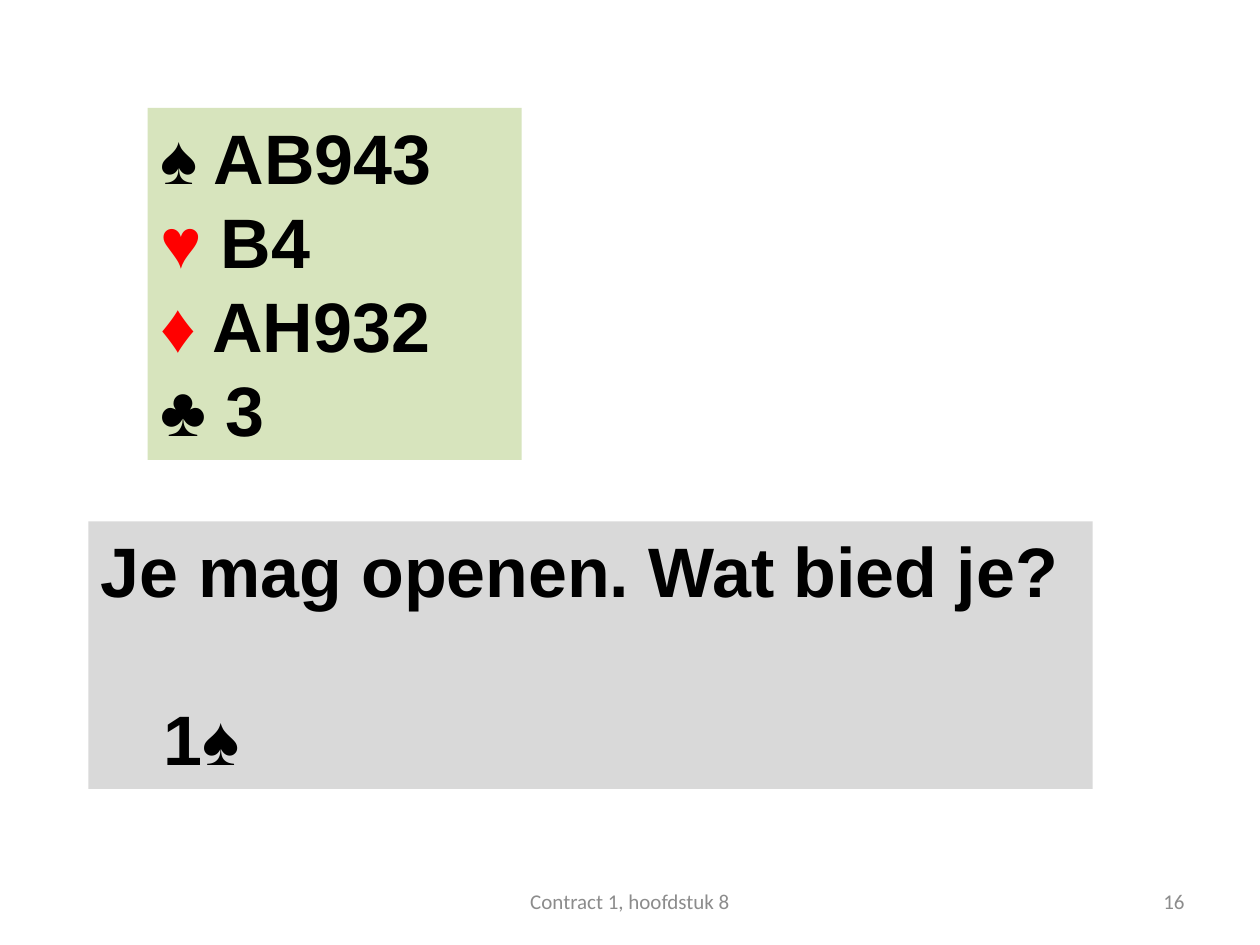
"""Build a bridge quiz slide: a hand of cards, the bidding question and the answer."""
from pptx import Presentation
from pptx.dml.color import RGBColor
from pptx.enum.shapes import MSO_SHAPE
from pptx.enum.text import MSO_ANCHOR, PP_ALIGN
from pptx.util import Pt


def colour(hex_string):
    return RGBColor.from_string(hex_string)


def write(paragraph, text, size=40, font="Arial", color="000000", bold=True,
          align=PP_ALIGN.LEFT):
    paragraph.alignment = align
    run = paragraph.add_run()
    run.text = text
    run.font.size = Pt(size)
    run.font.name = font
    run.font.bold = bold
    run.font.color.rgb = colour(color)


deck = Presentation()
deck.slide_width, deck.slide_height = Pt(720), Pt(540)
slide = deck.slides.add_slide(deck.slide_layouts[6])

panels = []
for left, top, width, height, fill in [
    (84.4, 61.7, 213.8, 201.1, "D7E4BD"),
    (50.6, 298, 573.8, 152.9, "D9D9D9"),
]:
    panel = slide.shapes.add_shape(
        MSO_SHAPE.RECTANGLE, Pt(left), Pt(top), Pt(width), Pt(height))
    panel.shadow.inherit = False
    panel.fill.solid()
    panel.fill.fore_color.rgb = colour(fill)
    panel.line.fill.background()
    panel.text_frame.word_wrap = True
    panel.text_frame.vertical_anchor = MSO_ANCHOR.TOP
    panels.append(panel.text_frame)
hand, bidding = panels

suits = [("♠", "AB943", "000000"), ("♥", "B4", "FF0000"),
         ("♦", "AH932", "FF0000"), ("♣", "3", "000000")]
for row, (suit, cards, suit_color) in enumerate(suits):
    holding = hand.add_paragraph() if row else hand.paragraphs[0]
    write(holding, suit, color=suit_color)
    write(holding, f" {cards}")

write(bidding.paragraphs[0], "Je mag openen. Wat bied je?")
answer = bidding.add_paragraph()
answer.space_before = Pt(48)
write(answer, "\t1♠")

for text, left, width, align in [
    ("16", 516, 168, PP_ALIGN.RIGHT),
    ("Contract 1, hoofdstuk 8", 246, 228, PP_ALIGN.CENTER),
]:
    footer = slide.shapes.add_textbox(Pt(left), Pt(500.5), Pt(width), Pt(28.75)).text_frame
    footer.word_wrap = True
    footer.vertical_anchor = MSO_ANCHOR.MIDDLE
    write(footer.paragraphs[0], text, size=12, font="Calibri", color="8C8C8C",
          bold=False, align=align)

deck.save("out.pptx")
